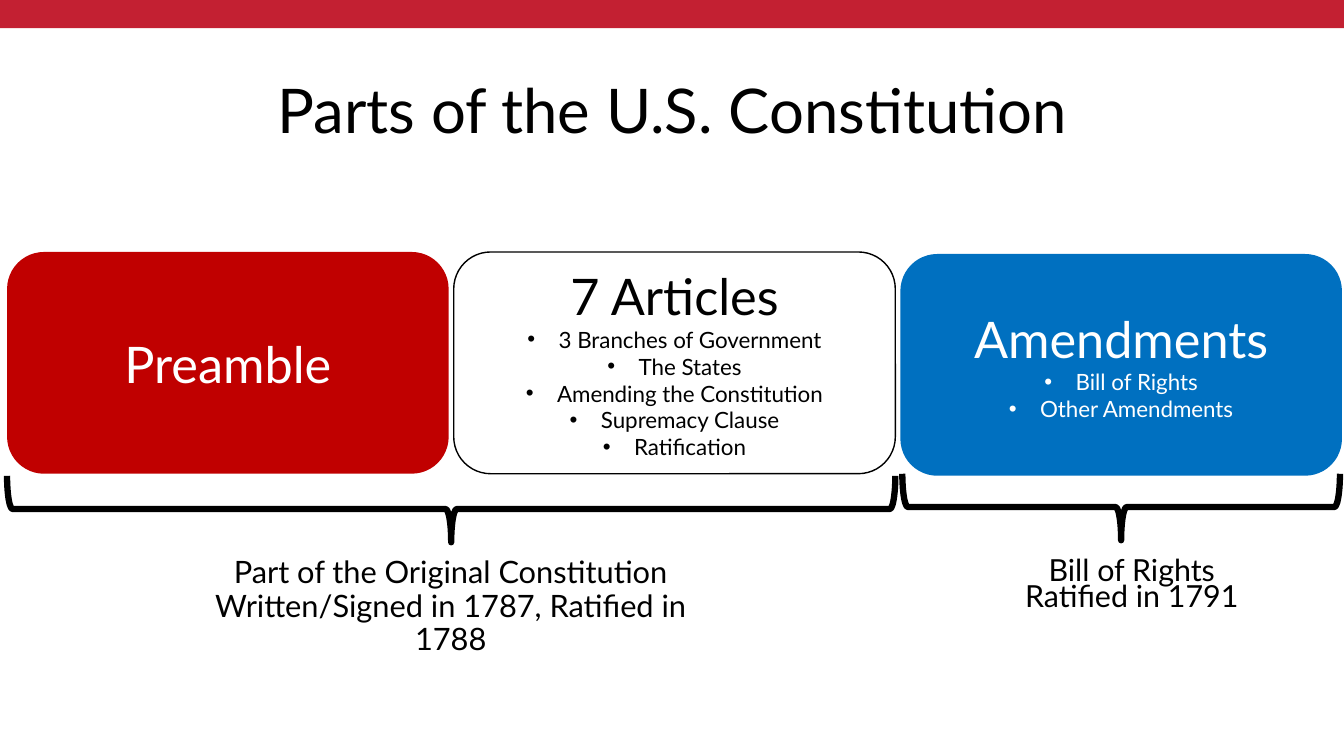
from dataclasses import dataclass

from lxml import etree
from pptx import Presentation
from pptx.dml.color import RGBColor
from pptx.enum.shapes import MSO_SHAPE
from pptx.enum.text import MSO_ANCHOR, MSO_AUTO_SIZE, PP_ALIGN
from pptx.oxml.ns import qn
from pptx.util import Inches, Pt

RECT = MSO_SHAPE.RECTANGLE
ROUNDED = MSO_SHAPE.ROUNDED_RECTANGLE
BRACE = MSO_SHAPE.LEFT_BRACE
CENTER = PP_ALIGN.CENTER
TOP, MIDDLE = MSO_ANCHOR.TOP, MSO_ANCHOR.MIDDLE
NO_AUTOFIT = MSO_AUTO_SIZE.NONE


@dataclass(frozen=True)
class Theme:
    font: str = "Lato"
    banner: str = "C32032"
    red: str = "C00000"
    blue: str = "0070C0"
    white: str = "FFFFFF"
    black: str = "000000"
    title: float = 44
    heading: float = 36
    caption: float = 22
    rights_caption: float = 21.7
    item: float = 16


THEME = Theme()
CARD_WIDTH, CARD_HEIGHT = 4.38, 2.2
CARD_LEFT, CARD_STEP = 0.07, 4.43


def set_bullet(p, bulleted):
    pPr = p._p.get_or_add_pPr()
    indent = Inches(0.31) if bulleted else 0
    pPr.set("marL", str(indent))
    pPr.set("indent", str(-indent))
    if bulleted:
        font = etree.SubElement(pPr, qn("a:buFont"))
        font.set("typeface", "Arial")
        etree.SubElement(pPr, qn("a:buChar")).set("char", "•")
    else:
        etree.SubElement(pPr, qn("a:buNone"))


def write(p, text, size, color=THEME.black, bulleted=False, spacing=1.0):
    set_bullet(p, bulleted)
    p.alignment = CENTER
    p.line_spacing = spacing
    p.space_before = Pt(0)
    r = p.add_run()
    r.text = text
    r.font.name = THEME.font
    r.font.size = Pt(size)
    r.font.color.rgb = RGBColor.from_string(color)


def place(sp, left, top, width, height):
    sp.left, sp.top = Inches(left), Inches(top)
    sp.width, sp.height = Inches(width), Inches(height)


def fill_text(sp, text, size, anchor=TOP, spacing=0.9):
    tf = sp.text_frame
    tf.word_wrap = True
    tf.auto_size = NO_AUTOFIT
    tf.vertical_anchor = anchor
    write(tf.paragraphs[0], text, size, spacing=spacing)


def add_shape(s, kind, left, top, width, height, fill=None, line=None, weight=1):
    sp = s.shapes.add_shape(kind, Inches(left), Inches(top), Inches(width), Inches(height))
    sp.shadow.inherit = False
    if fill:
        sp.fill.solid()
        sp.fill.fore_color.rgb = RGBColor.from_string(fill)
    else:
        sp.fill.background()
    if line:
        sp.line.color.rgb = RGBColor.from_string(line)
        sp.line.width = Pt(weight)
    else:
        sp.line.fill.background()
    return sp


def add_card(s, column, top, heading, items, fill, color, line=None):
    left = CARD_LEFT + column * CARD_STEP
    sp = add_shape(s, ROUNDED, left, top, CARD_WIDTH, CARD_HEIGHT, fill, line)
    tf = sp.text_frame
    tf.word_wrap = True
    tf.vertical_anchor = MIDDLE
    write(tf.paragraphs[0], heading, THEME.heading, color)
    for item in items:
        write(tf.add_paragraph(), item, THEME.item, color, bulleted=True)


def add_brace(s, left, top, span, depth=0.66):
    """Draw a brace that spans left to right and points down."""
    x = left + (span - depth) / 2
    y = top + (depth - span) / 2
    sp = add_shape(s, BRACE, x, y, depth, span, line=THEME.black, weight=4.5)
    sp.rotation = 270


def main():
    prs = Presentation()
    prs.slide_width, prs.slide_height = Inches(13.33), Inches(7.5)
    s = prs.slides.add_slide(prs.slide_layouts[1])
    title, rights = s.placeholders

    add_shape(s, RECT, 0, 0, 13.33, 0.28, THEME.banner)
    place(title, 0.92, 0.4, 11.5, 1.45)
    fill_text(title, "Parts of the U.S. Constitution", THEME.title, MIDDLE)
    place(rights, 9.89, 5.52, 2.67, 0.66)
    fill_text(rights, "Bill of Rights Ratified in 1791", THEME.rights_caption, spacing=0.7)
    founding = s.shapes.add_textbox(Inches(1.8), Inches(5.48), Inches(5.34), Inches(0.66))
    fill_text(founding, "Part of the Original Constitution Written/Signed in 1787, Ratified in 1788",
              THEME.caption)

    articles = ["3 Branches of Government", "The States", "Amending the Constitution",
                "Supremacy Clause", "Ratification"]
    amendments = ["Bill of Rights", "Other Amendments"]
    add_card(s, 0, 2.5, "Preamble", [], THEME.red, THEME.white)
    add_card(s, 1, 2.5, "7 Articles", articles, THEME.white, THEME.black, THEME.black)
    add_card(s, 2, 2.52, "Amendments", amendments, THEME.blue, THEME.white)

    add_brace(s, 0.07, 4.72, 8.81)
    add_brace(s, 8.95, 4.7, 4.34)
    prs.save("out.pptx")


if __name__ == "__main__":
    main()
